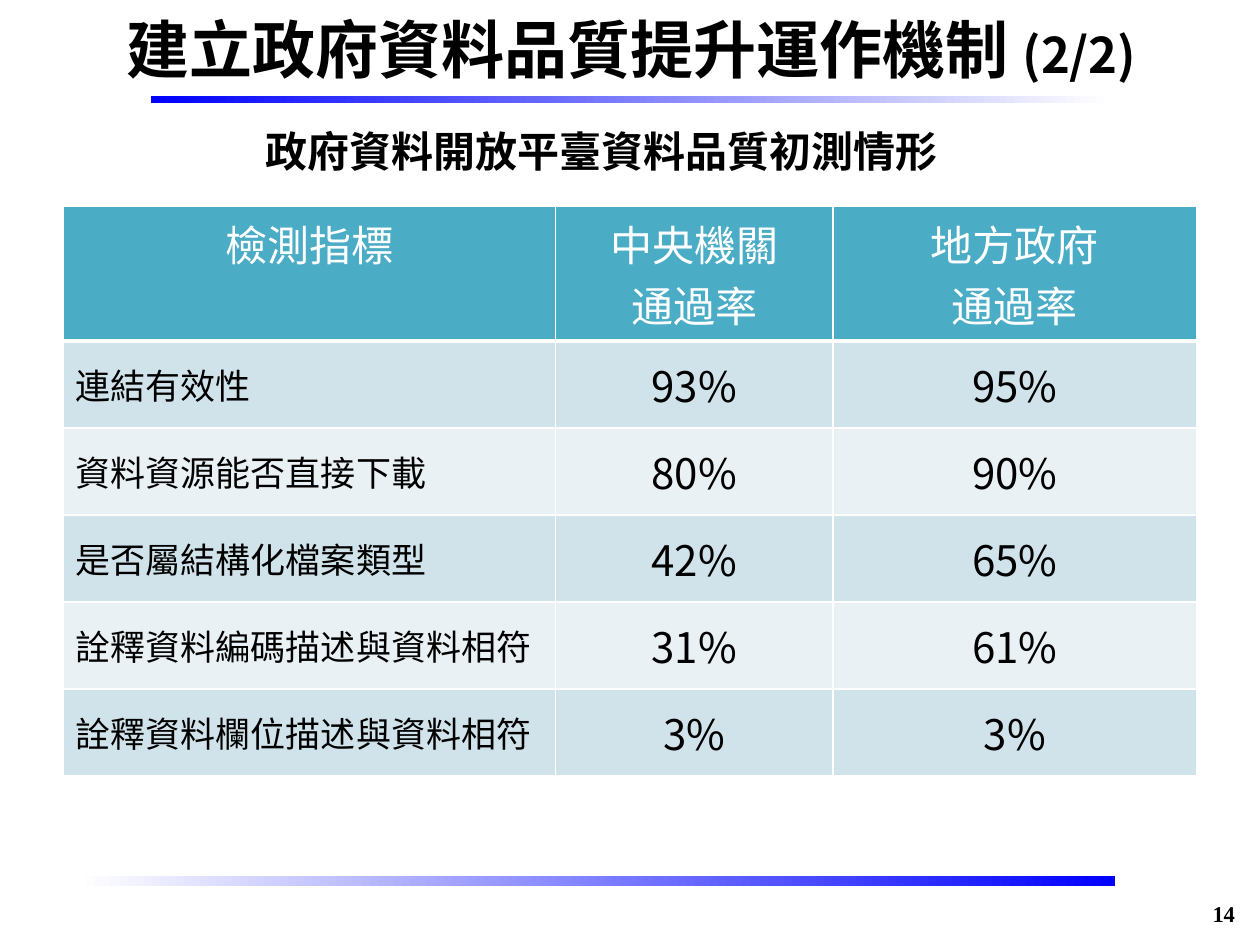
"""Build the slide on open-data quality pass rates."""
from typing import NamedTuple

from lxml.etree import SubElement
from pptx import Presentation
from pptx.dml.color import RGBColor
from pptx.enum.shapes import MSO_SHAPE as Preset
from pptx.enum.text import MSO_ANCHOR as Anchor, MSO_AUTO_SIZE as AutoSize, PP_ALIGN as Align
from pptx.oxml.ns import qn
from pptx.util import Inches, Pt

COLUMNS, ROWS = 100, 75
WIDTH, HEIGHT = Inches(10), Inches(7.5)
COLORS = {"black": "000000", "white": "FFFFFF", "blue": "0000FF",
          "header": "4BACC6", "odd": "D0E3EA", "even": "E9F1F5"}
SANS, SERIF = "Noto Sans CJK SC", "Times New Roman"


class Box(NamedTuple):
    """Place in grid columns and rows."""
    left: float
    top: float
    width: float
    height: float


class Style(NamedTuple):
    """Look of a text run."""
    size: float
    bold: bool = False
    color: str = "black"
    font: str = SANS


class Bar(NamedTuple):
    """Gradient bar running from one colour to another."""
    box: Box
    start: str
    end: str


class Indicator(NamedTuple):
    """Pass rates of one check."""
    name: str
    central: str
    local: str


BARS = [Bar(Box(6.2, 69.5, 82.3, 0.8), "white", "blue"),
        Bar(Box(12, 7.6, 76.2, 0.6), "blue", "white")]
TABLE_BOX = Box(5, 16.4, 90, 44.3)
TABLE_COLUMNS = [39.1, 22, 28.9]
HEADER_ROW, BODY_ROW = 9.8, 6.9
HEADINGS = ["檢測指標", "中央機關\n通過率", "地方政府\n通過率"]
INDICATORS = [
    Indicator("連結有效性", "93%", "95%"),
    Indicator("資料資源能否直接下載", "80%", "90%"),
    Indicator("是否屬結構化檔案類型", "42%", "65%"),
    Indicator("詮釋資料編碼描述與資料相符", "31%", "61%"),
    Indicator("詮釋資料欄位描述與資料相符", "3%", "3%"),
]


def across(columns: float) -> int:
    """Turn grid columns into a length."""
    return round(WIDTH * columns / COLUMNS)


def down(rows: float) -> int:
    """Turn grid rows into a length."""
    return round(HEIGHT * rows / ROWS)


def place(box: Box) -> tuple:
    """Turn a grid box into left, top, width and height."""
    return across(box.left), down(box.top), across(box.width), down(box.height)


def rgb(name: str) -> RGBColor:
    """Look up a colour."""
    return RGBColor.from_string(COLORS[name])


def add_run(paragraph, text: str, style: Style) -> None:
    """Add a run with Latin and East Asian fonts set."""
    run = paragraph.add_run()
    run.text = text
    formats = {"size": Pt(style.size), "bold": style.bold, "name": style.font}
    for attribute, value in formats.items():
        setattr(run.font, attribute, value)
    run.font.color.rgb = rgb(style.color)
    SubElement(run.font._element, qn("a:ea"), typeface=style.font)


def write(frame, text: str, style: Style, align: Align) -> None:
    """Write each line as a paragraph."""
    for index, line in enumerate(text.split("\n")):
        paragraph = frame.add_paragraph() if index else frame.paragraphs[0]
        paragraph.alignment = align
        add_run(paragraph, line, style)


def add_bar(slide, bar: Bar) -> None:
    """Draw a horizontal gradient bar."""
    shape = slide.shapes.add_shape(Preset.RECTANGLE, *place(bar.box))
    shape.shadow.inherit = False
    shape.line.fill.background()
    shape.fill.gradient()
    shape.fill.gradient_angle = 0
    for stop, color in zip(shape.fill.gradient_stops, (bar.start, bar.end)):
        stop.color.rgb = rgb(color)


def set_title(slide) -> None:
    """Move and fill the title placeholder."""
    title = slide.shapes.title
    bounds = place(Box(5.1, 0.3, 90, 7.1))
    for attribute, value in zip(("left", "top", "width", "height"), bounds):
        setattr(title, attribute, value)
    frame = title.text_frame
    frame.auto_size = AutoSize.NONE
    frame.vertical_anchor = Anchor.MIDDLE
    write(frame, "建立政府資料品質提升運作機制 ", Style(36, True), Align.CENTER)
    add_run(frame.paragraphs[0], "(2/2)", Style(28, True))


def add_text(slide, box: Box, text: str, style: Style, align: Align, wrap: bool) -> None:
    """Add a text box."""
    frame = slide.shapes.add_textbox(*place(box)).text_frame
    frame.word_wrap = wrap
    write(frame, text, style, align)


def set_borders(cell, bottom: float) -> None:
    """Give a cell white borders."""
    properties = cell._tc.get_or_add_tcPr()
    widths = {"a:lnL": 1, "a:lnR": 1, "a:lnT": 1, "a:lnB": bottom}
    for index, (tag, width) in enumerate(widths.items()):
        line = SubElement(properties, qn(tag), w=str(Pt(width)))
        properties.insert(index, line)
        fill = SubElement(line, qn("a:solidFill"))
        SubElement(fill, qn("a:srgbClr"), val=COLORS["white"])


def fill_cell(cell, text: str, row: int, column: int) -> None:
    """Fill and format one table cell."""
    header = row == 0
    color = "header" if header else "odd" if row % 2 else "even"
    cell.fill.solid()
    cell.fill.fore_color.rgb = rgb(color)
    set_borders(cell, 3 if header else 1)
    cell.vertical_anchor = Anchor.TOP if header else Anchor.MIDDLE
    label = column == 0 and not header
    style = Style(20 if label else 24, color="white" if header else "black")
    write(cell.text_frame, text, style, Align.LEFT if label else Align.CENTER)


def add_rates_table(slide) -> None:
    """Add the table of pass rates."""
    records = [HEADINGS, *INDICATORS]
    frame = slide.shapes.add_table(len(records), len(HEADINGS), *place(TABLE_BOX))
    table = frame.table
    for column, width in zip(table.columns, TABLE_COLUMNS):
        column.width = across(width)
    for row, record in enumerate(records):
        table.rows[row].height = down(BODY_ROW if row else HEADER_ROW)
        for column, text in enumerate(record):
            fill_cell(table.cell(row, column), text, row, column)


def main() -> None:
    """Build and save the presentation."""
    presentation = Presentation()
    presentation.slide_width, presentation.slide_height = WIDTH, HEIGHT
    slide = presentation.slides.add_slide(presentation.slide_layouts[5])
    for bar in BARS:
        add_bar(slide, bar)
    set_title(slide)
    add_rates_table(slide)
    add_text(slide, Box(20.1, 9.5, 55.9, 5), "政府資料開放平臺資料品質初測情形",
             Style(24, True), Align.LEFT, False)
    add_text(slide, Box(91.3, 70.9, 7.7, 2.4), "14",
             Style(12.9, True, font=SERIF), Align.RIGHT, True)
    presentation.save("out.pptx")


if __name__ == "__main__":
    main()
